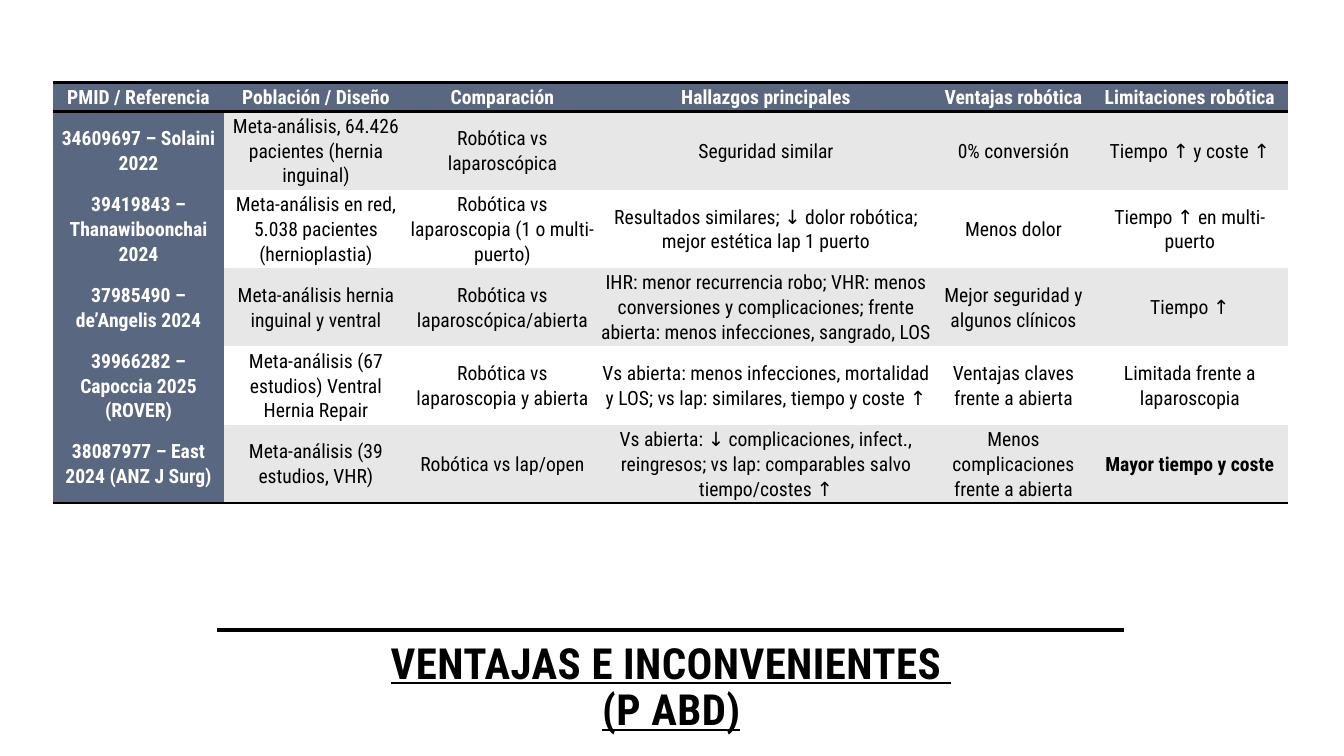
from dataclasses import dataclass

import lxml.etree
import pptx
import pptx.dml.color
import pptx.enum.shapes
import pptx.enum.text
import pptx.oxml.ns
import pptx.presentation
import pptx.slide
import pptx.table
import pptx.text.text
import pptx.util


@dataclass(frozen=True)
class Theme:
    font: str = "Roboto Condensed"
    ink: str = "000000"
    paper: str = "FFFFFF"
    heading: str = "596781"
    band: str = "E7E7E7"
    title_size: float = 30.6
    cell_size: float = 14
    title_rule: float = 3.5
    table_rule: float = 2


@dataclass(frozen=True)
class Box:
    """Position and size in grid columns and rows."""
    left: float
    top: float
    width: float
    height: float


@dataclass(frozen=True)
class Study:
    reference: str
    design: str
    comparison: str
    findings: str
    advantages: str
    limitations: str
    bold_limitations: bool = False

    def texts(self) -> list[str]:
        return [self.reference, self.design, self.comparison,
                self.findings, self.advantages, self.limitations]


THEME = Theme()

# Slide grid: 40 columns by 30 rows
SLIDE_WIDTH = pptx.util.Inches(13.33)
SLIDE_HEIGHT = pptx.util.Inches(7.5)
GRID_COLUMNS, GRID_ROWS = 40, 30

TITLE_BOX = Box(10.2, 25.32, 19.56, 4)
TITLE_LINES = ["VENTAJAS E INCONVENIENTES ", "(P ABD)"]
RULE_BOX = Box(6.45, 25, 27, 0)
TABLE_LEFT, TABLE_TOP = 1.59, 3.28
COLUMN_WIDTHS = [5.07, 5.49, 5.61, 10.08, 4.65, 5.85]
HEADER_HEIGHT, STUDY_HEIGHT = 1.08, 3.08
PLAIN_TABLE_STYLE = "{2D5ABB26-0587-4C30-8999-92F81FD0307C}"

STUDIES = [
    Study("PMID / Referencia", "Población / Diseño", "Comparación",
          "Hallazgos principales", "Ventajas robótica", "Limitaciones robótica"),
    Study("34609697 – Solaini 2022",
          "Meta-análisis, 64.426 pacientes (hernia inguinal)",
          "Robótica vs laparoscópica", "Seguridad similar",
          "0% conversión", "Tiempo ↑ y coste ↑"),
    Study("39419843 – Thanawiboonchai 2024",
          "Meta-análisis en red, 5.038 pacientes (hernioplastia)",
          "Robótica vs laparoscopia (1 o multi-puerto)",
          "Resultados similares; ↓ dolor robótica; mejor estética lap 1 puerto",
          "Menos dolor", "Tiempo ↑ en multi-puerto"),
    Study("37985490 – de’Angelis 2024",
          "Meta-análisis hernia inguinal y ventral",
          "Robótica vs laparoscópica/abierta",
          "IHR: menor recurrencia robo; VHR: menos conversiones y complicaciones; "
          "frente abierta: menos infecciones, sangrado, LOS",
          "Mejor seguridad y algunos clínicos", "Tiempo ↑"),
    Study("39966282 – Capoccia 2025 (ROVER)",
          "Meta-análisis (67 estudios) Ventral Hernia Repair",
          "Robótica vs laparoscopia y abierta",
          "Vs abierta: menos infecciones, mortalidad y LOS; "
          "vs lap: similares, tiempo y coste ↑",
          "Ventajas claves frente a abierta", "Limitada frente a laparoscopia"),
    Study("38087977 – East 2024 (ANZ J Surg)",
          "Meta-análisis (39 estudios, VHR)", "Robótica vs lap/open",
          "Vs abierta: ↓ complicaciones, infect., reingresos; "
          "vs lap: comparables salvo tiempo/costes ↑",
          "Menos complicaciones frente a abierta", "Mayor tiempo y coste",
          bold_limitations=True),
]


def across(columns: float) -> pptx.util.Emu:
    return pptx.util.Emu(round(SLIDE_WIDTH * columns / GRID_COLUMNS))


def down(rows: float) -> pptx.util.Emu:
    return pptx.util.Emu(round(SLIDE_HEIGHT * rows / GRID_ROWS))


def color(value: str) -> pptx.dml.color.RGBColor:
    return pptx.dml.color.RGBColor.from_string(value)


def add_run(paragraph: pptx.text.text._Paragraph, text: str, size: float,
            ink: str, bold: bool) -> pptx.text.text._Run:
    run = paragraph.add_run()
    run.text = text
    run.font.name = THEME.font
    run.font.size = pptx.util.Pt(size)
    run.font.bold = bold
    run.font.color.rgb = color(ink)
    return run


def add_title(slide: pptx.slide.Slide) -> None:
    title = slide.shapes.title
    title.left, title.top = across(TITLE_BOX.left), down(TITLE_BOX.top)
    title.width, title.height = across(TITLE_BOX.width), down(TITLE_BOX.height)
    frame = title.text_frame
    frame.word_wrap = True
    frame.auto_size = pptx.enum.text.MSO_AUTO_SIZE.NONE
    frame.vertical_anchor = pptx.enum.text.MSO_ANCHOR.MIDDLE
    paragraph = frame.paragraphs[0]
    paragraph.alignment = pptx.enum.text.PP_ALIGN.CENTER
    paragraph.line_spacing = 0.9
    for index, line in enumerate(TITLE_LINES):
        if index:
            paragraph.add_line_break()
        run = add_run(paragraph, line, THEME.title_size, THEME.ink, True)
        run.font.underline = True
        run._r.get_or_add_rPr().set("spc", "30")


def add_title_rule(slide: pptx.slide.Slide) -> None:
    top = down(RULE_BOX.top)
    rule = slide.shapes.add_connector(
        pptx.enum.shapes.MSO_CONNECTOR.STRAIGHT, across(RULE_BOX.left), top,
        across(RULE_BOX.left + RULE_BOX.width), top)
    rule.line.color.rgb = color(THEME.ink)
    rule.line.width = pptx.util.Pt(THEME.title_rule)
    lxml.etree.SubElement(rule._element.spPr, pptx.oxml.ns.qn("a:effectLst"))


def add_border(cell: pptx.table._Cell, side: str) -> None:
    border = lxml.etree.SubElement(
        cell._tc.get_or_add_tcPr(), pptx.oxml.ns.qn(f"a:ln{side}"),
        w=str(pptx.util.Pt(THEME.table_rule)))
    fill = lxml.etree.SubElement(border, pptx.oxml.ns.qn("a:solidFill"))
    lxml.etree.SubElement(fill, pptx.oxml.ns.qn("a:srgbClr"), val=THEME.ink)


def fill_cell(cell: pptx.table._Cell, text: str, fill: str, ink: str,
              bold: bool, borders: str) -> None:
    cell.margin_left = cell.margin_right = pptx.util.Inches(0.02)
    cell.margin_top = cell.margin_bottom = pptx.util.Inches(0.02)
    cell.vertical_anchor = pptx.enum.text.MSO_ANCHOR.MIDDLE
    for side in borders:
        add_border(cell, side)
    cell.fill.solid()
    cell.fill.fore_color.rgb = color(fill)
    paragraph = cell.text_frame.paragraphs[0]
    paragraph.alignment = pptx.enum.text.PP_ALIGN.CENTER
    paragraph.line_spacing = 1.07
    paragraph.space_after = pptx.util.Pt(8)
    add_run(paragraph, text, THEME.cell_size, ink, bold)


def add_study_table(slide: pptx.slide.Slide) -> None:
    heights = [HEADER_HEIGHT] + [STUDY_HEIGHT] * (len(STUDIES) - 1)
    table = slide.shapes.add_table(
        len(STUDIES), len(COLUMN_WIDTHS), across(TABLE_LEFT), down(TABLE_TOP),
        across(sum(COLUMN_WIDTHS)), down(sum(heights))).table
    table.horz_banding = False
    table._tbl.tblPr.find(pptx.oxml.ns.qn("a:tableStyleId")).text = PLAIN_TABLE_STYLE
    for column, width in zip(table.columns, COLUMN_WIDTHS):
        column.width = across(width)
    for row, height in zip(table.rows, heights):
        row.height = down(height)

    # Header row and first column share one look; the body is banded
    last_row, last_column = len(STUDIES) - 1, len(COLUMN_WIDTHS) - 1
    for row_index, study in enumerate(STUDIES):
        borders = {0: "TB", last_row: "B"}.get(row_index, "")
        band = THEME.band if row_index % 2 else THEME.paper
        for column_index, text in enumerate(study.texts()):
            heading = row_index == 0 or column_index == 0
            bold = heading or (study.bold_limitations and column_index == last_column)
            fill_cell(table.cell(row_index, column_index), text,
                      THEME.heading if heading else band,
                      THEME.paper if heading else THEME.ink, bold, borders)


def main() -> None:
    presentation = pptx.Presentation()
    presentation.slide_width = SLIDE_WIDTH
    presentation.slide_height = SLIDE_HEIGHT
    slide = presentation.slides.add_slide(presentation.slide_layouts[5])
    add_title(slide)
    add_title_rule(slide)
    add_study_table(slide)
    presentation.save("out.pptx")


if __name__ == "__main__":
    main()
